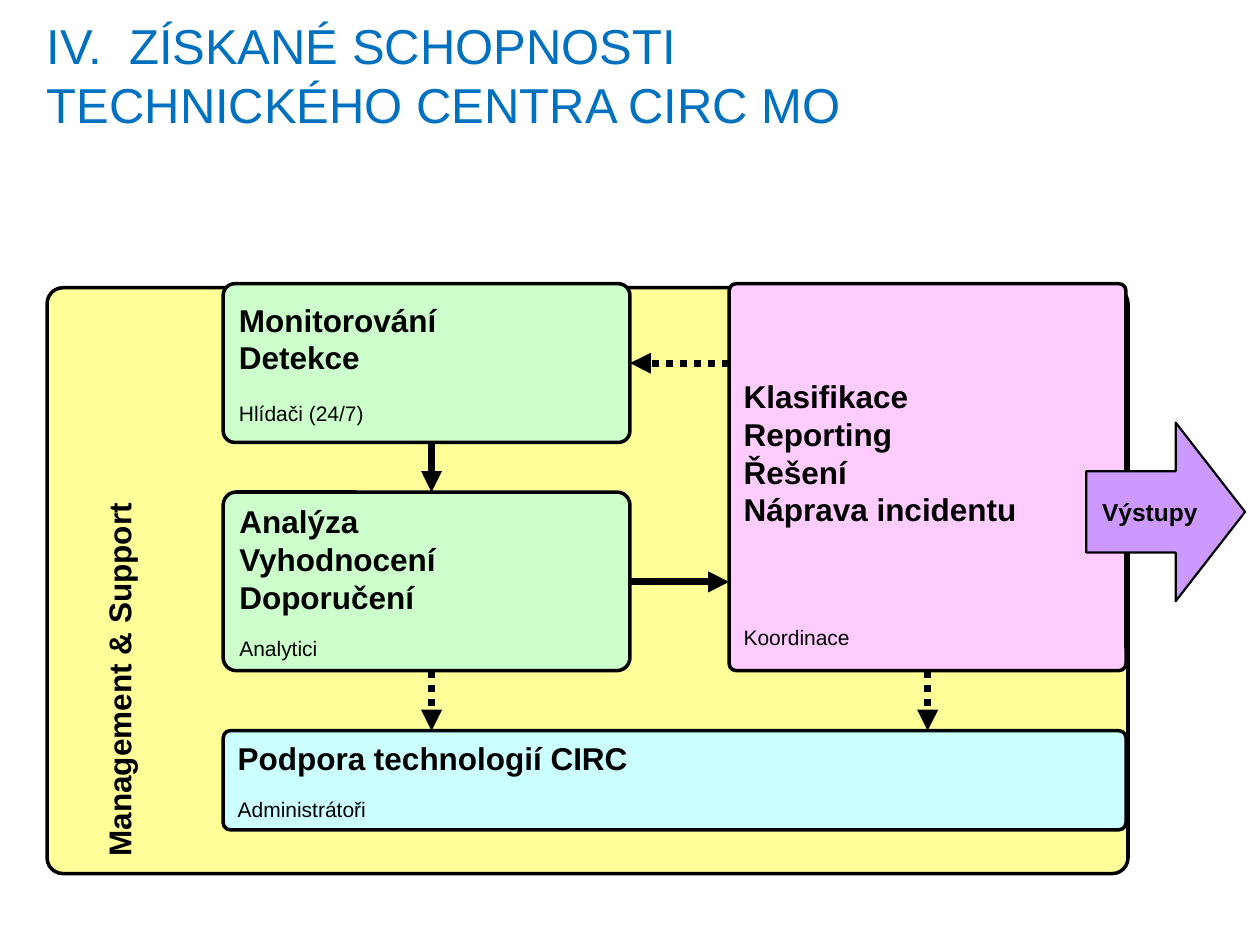
from lxml.etree import SubElement
from pptx import Presentation
from pptx.dml.color import RGBColor
from pptx.enum.dml import MSO_LINE_DASH_STYLE as Dash
from pptx.enum.shapes import MSO_CONNECTOR_TYPE as Connector, MSO_SHAPE as Shape
from pptx.enum.text import MSO_ANCHOR as Anchor, PP_ALIGN as Align
from pptx.oxml.ns import qn
from pptx.util import Cm, Pt

COLORS = {
    "title": "0070C0", "ink": "000000", "support": "FFFF99", "analysis": "CCFFCC",
    "coordination": "FFCCFF", "technology": "CCFFFF", "output": "CC99FF",
}
HEADING = {"size": Pt(18), "bold": True}
ROLE = {"size": Pt(12), "bold": False}
OUTPUT = {"size": Pt(14), "bold": True}


class ProcessSlide:
    """Holds the diagram style and the slide being drawn."""

    def __init__(self, deck):
        self.font = "Arial"
        self.slide = deck.slides.add_slide(deck.slide_layouts[5])

    def color(self, name):
        return RGBColor.from_string(COLORS[name])

    def add_text(self, para, text, style, color="ink"):
        span = para.add_run()
        span.text = text
        for name, value in {"name": self.font, **style}.items():
            setattr(span.font, name, value)
        span.font.color.rgb = self.color(color)

    def title(self, text, left, top, width, height):
        box = self.slide.shapes.title
        places = {"left": left, "top": top, "width": width, "height": height}
        for name, value in places.items():
            setattr(box, name, Cm(value))
        box.text_frame.vertical_anchor = Anchor.MIDDLE
        para = box.text_frame.paragraphs[0]
        para.alignment = Align.LEFT
        self.add_text(para, text, {"size": Pt(28), "bold": False}, "title")

    def box(self, kind, place, fill, corners, lines, weight=2, align=Align.LEFT, **frame_format):
        box = self.slide.shapes.add_shape(kind, *map(Cm, place))
        box.shadow.inherit = False
        box.fill.solid()
        box.fill.fore_color.rgb = self.color(fill)
        box.line.color.rgb = self.color("ink")
        box.line.width = Pt(weight)
        for index, value in enumerate(corners):
            box.adjustments[index] = value
        frame = box.text_frame
        settings = {"word_wrap": True, "vertical_anchor": Anchor.MIDDLE, **frame_format}
        for name, value in settings.items():
            setattr(frame, name, value)
        for index, (text, style, gap) in enumerate(lines):
            para = frame.paragraphs[0] if index == 0 else frame.add_paragraph()
            para.alignment = align
            if gap:
                para.space_before = Pt(gap)
            self.add_text(para, text, style)
        return box

    def stage(self, place, fill, corner, headings, role, gap, **frame_format):
        lines = [(text, HEADING, 0) for text in headings] + [(role, ROLE, gap)]
        self.box(Shape.ROUNDED_RECTANGLE, place, fill, [corner], lines, **frame_format)

    def arrow(self, start, end, dotted=False):
        arrow = self.slide.shapes.add_connector(Connector.STRAIGHT, *map(Cm, start + end))
        arrow.line.color.rgb = self.color("ink")
        arrow.line.width = Pt(4)
        if dotted:
            arrow.line.dash_style = Dash.ROUND_DOT
        properties = arrow._element.spPr
        SubElement(properties.find(qn("a:ln")), qn("a:tailEnd"), type="triangle")
        SubElement(properties, qn("a:effectLst"))


def main():
    deck = Presentation()
    deck.slide_width, deck.slide_height = Cm(25.4), Cm(19.05)
    page = ProcessSlide(deck)
    page.title("IV.  ZÍSKANÉ SCHOPNOSTI TECHNICKÉHO CENTRA CIRC MO", 0.69, 0, 19.28, 3)

    left, stage_width = 4.5, 8.2
    right, right_width = 14.7, 8
    top, monitor_height = 5.72, 3.2
    analysis_top, analysis_height = 9.92, 3.6
    support_top = 14.73
    stage_end, monitor_end = left + stage_width, top + monitor_height
    analysis_end = analysis_top + analysis_height
    stage_axis, right_axis = 8.7, right + right_width / 2

    support = page.box(
        Shape.ROUNDED_RECTANGLE, (5.94, 0.81, 11.81, 21.79), "support", [0.027],
        [("Management & Support", HEADING, 0)],
        vertical_anchor=Anchor.TOP, margin_top=Cm(0.97))
    support.rotation = 270

    page.arrow((stage_axis, monitor_end), (stage_axis, analysis_top))
    page.arrow((stage_end, 11.73), (right, 11.73))
    page.arrow((right, 7.32), (stage_end, 7.32), dotted=True)
    for axis in (right_axis, stage_axis):
        page.arrow((axis, analysis_end), (axis, support_top), dotted=True)

    page.stage((left, top, stage_width, monitor_height), "analysis", 0.073,
               ["Monitorování", "Detekce"], "Hlídači (24/7)", 13.8)
    page.stage((left, analysis_top, stage_width, analysis_height), "analysis", 0.073,
               ["Analýza", "Vyhodnocení", "Doporučení"], "Analytici", 11.5)
    page.stage((right, top, right_width, analysis_end - top), "coordination", 0.018,
               ["Klasifikace", "Reporting", "Řešení", "Náprava incidentu"],
               "Koordinace", 55.2, margin_top=Cm(1.59))
    page.box(Shape.RIGHT_ARROW, (21.9, 8.52, 3.2, 3.6), "output", [0.456, 0.437],
             [("Výstupy", OUTPUT, 0)], weight=1.25, align=Align.CENTER, word_wrap=False)
    page.stage((left, support_top, right + right_width - left, 2), "technology", 0.073,
               ["Podpora technologií CIRC"], "Administrátoři", 11.5)
    deck.save("out.pptx")


if __name__ == "__main__":
    main()
